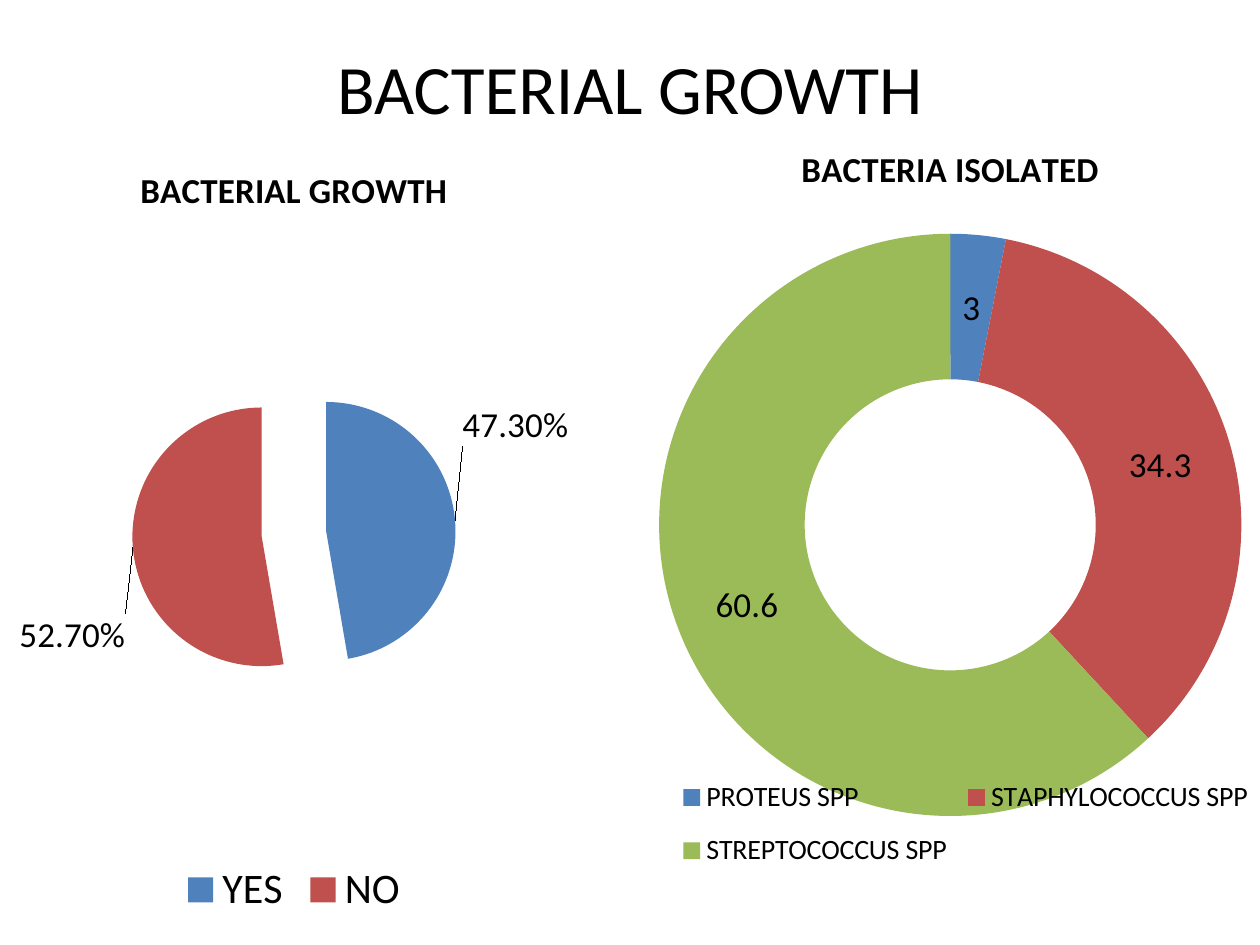
from pptx import Presentation
from pptx.chart.data import CategoryChartData
from pptx.dml.color import RGBColor
from pptx.enum.chart import XL_CHART_TYPE as ChartType
from pptx.enum.chart import XL_LABEL_POSITION as LabelPosition
from pptx.enum.chart import XL_LEGEND_POSITION as LegendPosition
from pptx.enum.text import MSO_ANCHOR as Anchor
from pptx.enum.text import PP_ALIGN as Align
from pptx.oxml import parse_xml
from pptx.oxml.ns import nsdecls, qn
from pptx.util import Pt

FONT = "Calibri"
COLORS = {"text": "000000", "blue": "4F81BD", "red": "C0504D", "green": "9BBB59"}
SLICES = ("blue", "red", "green")


def style_font(font, size, bold=False):
    """Apply the shared typeface and text colour at the given size."""
    font.name, font.size, font.bold = FONT, Pt(size), bold
    font.color.rgb = RGBColor.from_string(COLORS["text"])


def chart_xml(tag, attributes="", content=""):
    """Make one element of the chart namespace."""
    return parse_xml(f"<c:{tag} {nsdecls('c')} {attributes}>{content}</c:{tag}>")


def set_layout(parent, index, **values):
    """Place a chart part by fractions of the chart area."""
    for old in parent.findall(qn("c:layout")):
        parent.remove(old)
    content = "".join(f'<c:{tag} val="{value}"/>' for tag, value in values.items())
    layout = chart_xml("layout", content=f"<c:manualLayout>{content}</c:manualLayout>")
    parent.insert(index, layout)


def set_box(parent, index, box, **target):
    """Place a plot area or legend by left, top, width and height."""
    sides = dict(zip("xywh", box))
    set_layout(parent, index, **target, xMode="edge", yMode="edge", **sides)


def add_title(slide, text):
    """Add the centred slide title."""
    frame = slide.shapes.add_textbox(Pt(36), Pt(21.6), Pt(648), Pt(56.2)).text_frame
    frame.word_wrap = True
    frame.vertical_anchor = Anchor.MIDDLE
    paragraph = frame.paragraphs[0]
    paragraph.text, paragraph.alignment = text, Align.CENTER
    style_font(paragraph.font, 39.6)


def add_ring_chart(slide, kind, position, title, values, number_format, legend_size, plot_box):
    """Add a pie or doughnut chart with value labels and a bottom legend."""
    data = CategoryChartData(number_format=number_format)
    data.categories = list(values)
    data.add_series("Series 1", list(values.values()))
    chart = slide.shapes.add_chart(kind, *map(Pt, position), data).chart
    style_font(chart.font, 10)
    chart.has_title = True
    chart.chart_title.include_in_layout = False
    paragraph = chart.chart_title.text_frame.paragraphs[0]
    paragraph.text = title
    style_font(paragraph.font, 20, bold=True)
    chart.has_legend = True
    chart.legend.position = LegendPosition.BOTTOM
    chart.legend.include_in_layout = False
    style_font(chart.legend.font, legend_size)
    plot = chart.plots[0]
    plot.vary_by_categories = True
    series = plot.series[0]
    for index in range(len(values)):
        fill = series.points[index].format.fill
        fill.solid()
        fill.fore_color.rgb = RGBColor.from_string(COLORS[SLICES[index]])
    labels = series.data_labels
    labels.show_value, labels.show_percentage = True, False
    labels.number_format, labels.number_format_is_linked = number_format, False
    style_font(labels.font, 20)
    plot_area = plot._element.getparent()
    set_box(plot_area, 0, plot_box, layoutTarget="inner")
    return chart


def explode_slices(chart, percent):
    """Pull every slice away from the centre."""
    for point in chart.plots[0].series[0]._element.findall(qn("c:dPt")):
        point.find(qn("c:spPr")).addprevious(chart_xml("explosion", f'val="{percent}"'))


def shift_labels(chart, number_format, offsets):
    """Move the outside labels by fractions of the chart area, each on one line."""
    series = chart.plots[0].series[0]
    series.data_labels.position = LabelPosition.OUTSIDE_END
    for index, (x, y) in enumerate(offsets):
        label = series.points[index].data_label
        style_font(label.font, 20)
        label.position = LabelPosition.OUTSIDE_END
        element = series.data_labels._element.findall(qn("c:dLbl"))[index]
        set_layout(element, 1, x=x, y=y)
        attributes = f'formatCode="{number_format}" sourceLinked="0"'
        element.insert(2, chart_xml("numFmt", attributes))
    for body in series.data_labels._element.iter(qn("a:bodyPr")):
        body.set("wrap", "none")


def main():
    """Build the slide and save it."""
    presentation = Presentation()
    presentation.slide_width, presentation.slide_height = Pt(720), Pt(540)
    slide = presentation.slides.add_slide(presentation.slide_layouts[6])
    add_title(slide, "BACTERIAL GROWTH")
    growth = add_ring_chart(
        slide, ChartType.PIE, (0, 78, 336, 450), "BACTERIAL GROWTH",
        {"YES": 0.473, "NO": 0.527}, "0.00%", 24, (0.28, 0.34, 0.44, 0.33))
    explode_slices(growth, 25)
    shift_labels(growth, "0.00%", [(0, -0.12), (0, 0.11)])
    isolated = add_ring_chart(
        slide, ChartType.DOUGHNUT, (366, 66, 354, 450), "BACTERIA ISOLATED",
        {"PROTEUS SPP": 3, "STAPHYLOCOCCUS SPP": 34.3, "STREPTOCOCCUS SPP": 60.6},
        "General", 16, (0.03, 0.15, 0.94, 0.74))
    set_box(isolated.legend._element, 1, (0.05, 0.82, 0.95, 0.16))
    presentation.save("out.pptx")


if __name__ == "__main__":
    main()
